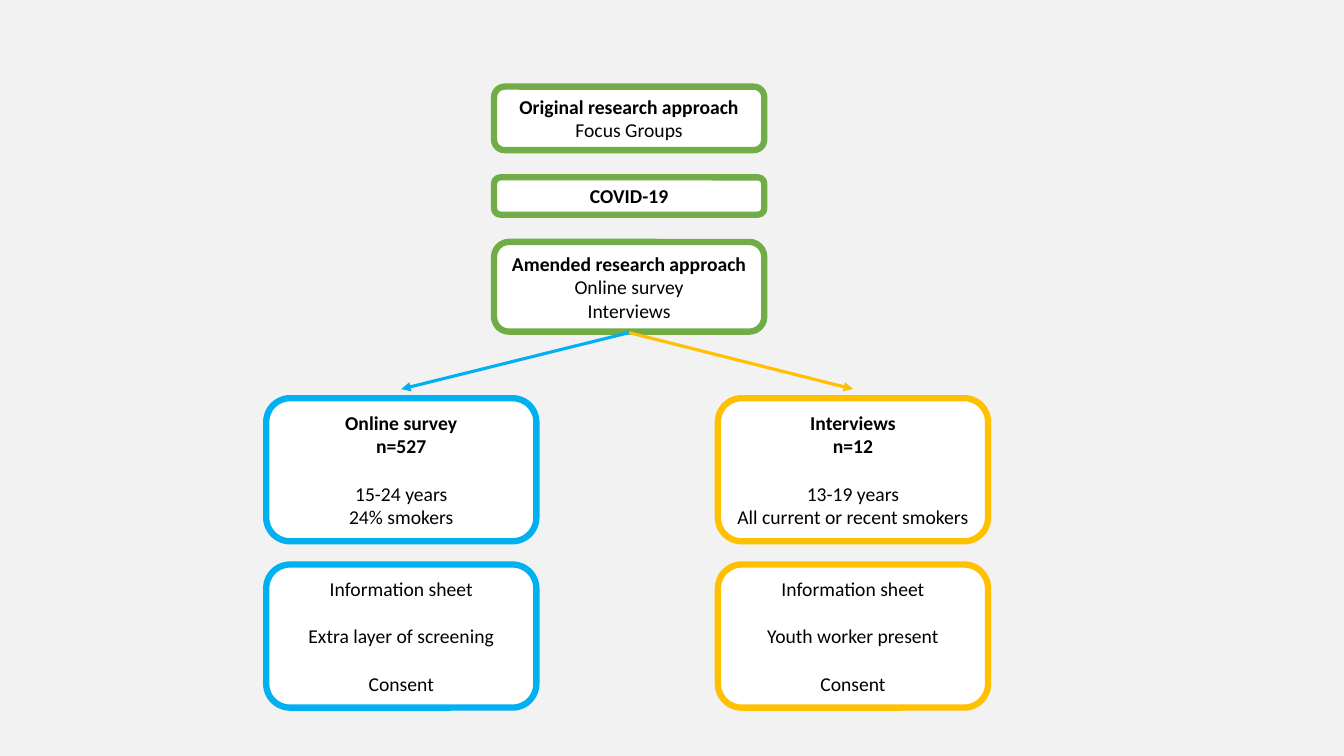
from pptx import Presentation
from pptx import util as u
from pptx.dml.color import RGBColor
from pptx.enum import shapes, text
from pptx.oxml import parse_xml
from pptx.oxml.ns import nsdecls, qn

BACKGROUND = RGBColor(0xF2, 0xF2, 0xF2)
WHITE = RGBColor(0xFF, 0xFF, 0xFF)
BLACK = RGBColor(0x00, 0x00, 0x00)
GREEN = RGBColor(0x70, 0xAD, 0x47)
BLUE = RGBColor(0x00, 0xB0, 0xF0)
AMBER = RGBColor(0xFF, 0xC0, 0x00)

BOX_WIDTH = 2.68
STAGE_LEFT = 4.9
STAGE_TOP = 0.86
STAGE_GAP = 0.27
BRANCH_TOP = 3.95
BRANCH_HEIGHT = 1.42
BRANCH_GAP = 0.23
FORK = (STAGE_LEFT + BOX_WIDTH / 2, 3.3)
ARROW_END = 3.86
LINE_SPACE = u.Pt(17)

STAGES = [
    (0.63, ["Original research approach"], ["Focus Groups"]),
    (0.37, ["COVID-19"], []),
    (0.89, ["Amended research approach"], ["Online survey", "Interviews"]),
]
BRANCHES = [
    (2.64, BLUE, ["Online survey", "n=527"], ["15-24 years", "24% smokers"],
     ["Information sheet", "Extra layer of screening", "Consent"]),
    (7.12, AMBER, ["Interviews", "n=12"], ["13-19 years", "All current or recent smokers"],
     ["Information sheet", "Youth worker present", "Consent"]),
]


def add_box(page, left, top, height, color, headings, details, spaced=()):
    box = page.shapes.add_shape(
        shapes.MSO_SHAPE.ROUNDED_RECTANGLE,
        u.Inches(left), u.Inches(top), u.Inches(BOX_WIDTH), u.Inches(height))
    box.shadow.inherit = False
    box.fill.solid()
    box.fill.fore_color.rgb = WHITE
    box.line.color.rgb = color
    box.line.width = u.Pt(4.5)
    frame = box.text_frame
    frame.word_wrap = True
    frame.vertical_anchor = text.MSO_ANCHOR.MIDDLE
    for index, line in enumerate(headings + details):
        para = frame.paragraphs[0] if index == 0 else frame.add_paragraph()
        para.text = line
        para.alignment = text.PP_ALIGN.CENTER
        if index in spaced:
            para.space_before = LINE_SPACE
        para.font.name = "Calibri"
        para.font.size = u.Pt(14)
        para.font.bold = index < len(headings)
        para.font.color.rgb = BLACK


def add_arrow(page, start, end, color):
    arrow = page.shapes.add_connector(
        shapes.MSO_CONNECTOR.STRAIGHT, *(u.Inches(value) for value in start + end))
    arrow.line.color.rgb = color
    arrow.line.width = u.Pt(2.25)
    properties = arrow._element.spPr
    properties.find(qn("a:ln")).append(
        parse_xml(f'<a:tailEnd {nsdecls("a")} type="triangle"/>'))
    properties.append(parse_xml(f'<a:effectLst {nsdecls("a")}/>'))


def add_stages(page, left, top):
    for height, headings, details in STAGES:
        add_box(page, left, top, height, GREEN, headings, details)
        top += height + STAGE_GAP


def add_branch(page, left, top, color, headings, sample, safeguards):
    add_box(page, left, top, BRANCH_HEIGHT, color, headings, sample, spaced=(2,))
    add_box(page, left, top + BRANCH_HEIGHT + BRANCH_GAP, BRANCH_HEIGHT, color,
            [], safeguards, spaced=(1, 2))
    add_arrow(page, FORK, (left + BOX_WIDTH / 2, ARROW_END), color)


def main():
    deck = Presentation()
    deck.slide_width = u.Inches(13.33)
    deck.slide_height = u.Inches(7.5)
    page = deck.slides.add_slide(deck.slide_layouts[6])
    page.background.fill.solid()
    page.background.fill.fore_color.rgb = BACKGROUND
    add_stages(page, STAGE_LEFT, STAGE_TOP)
    for left, color, headings, sample, safeguards in BRANCHES:
        add_branch(page, left, BRANCH_TOP, color, headings, sample, safeguards)
    deck.save("out.pptx")


if __name__ == "__main__":
    main()
